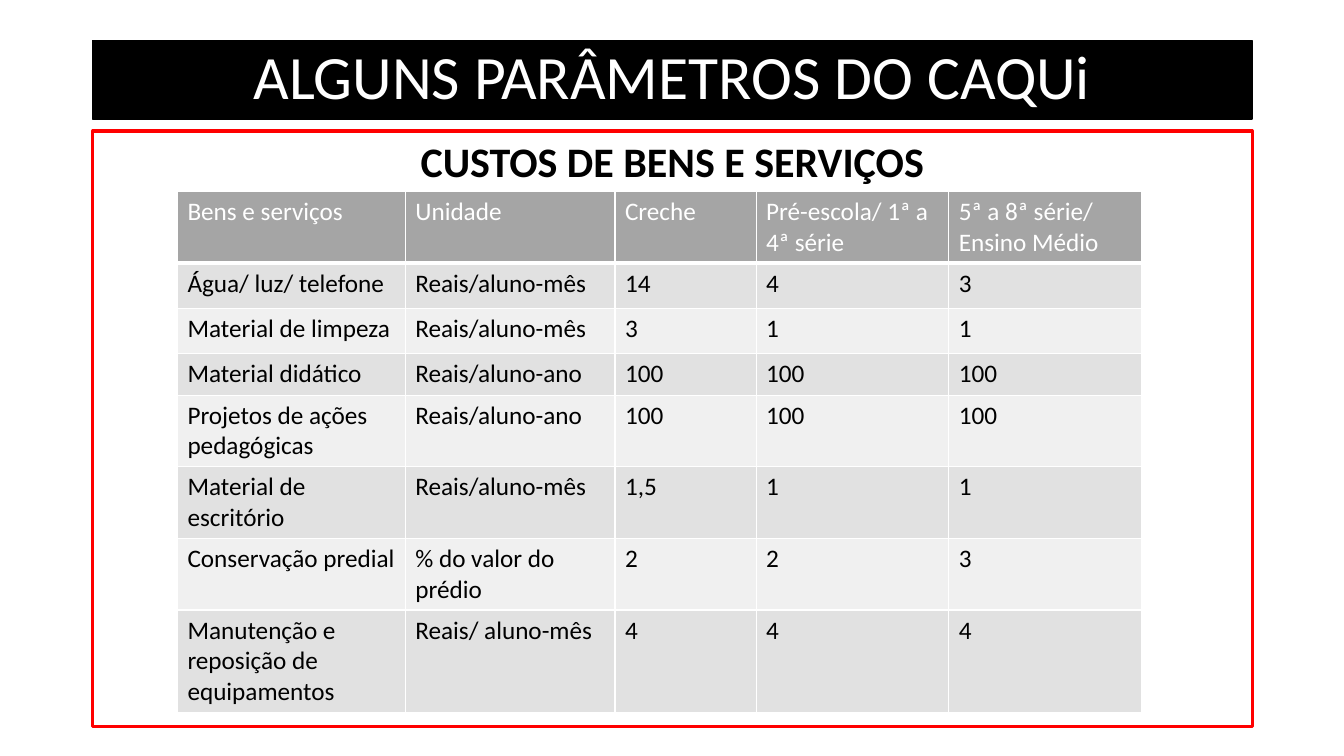
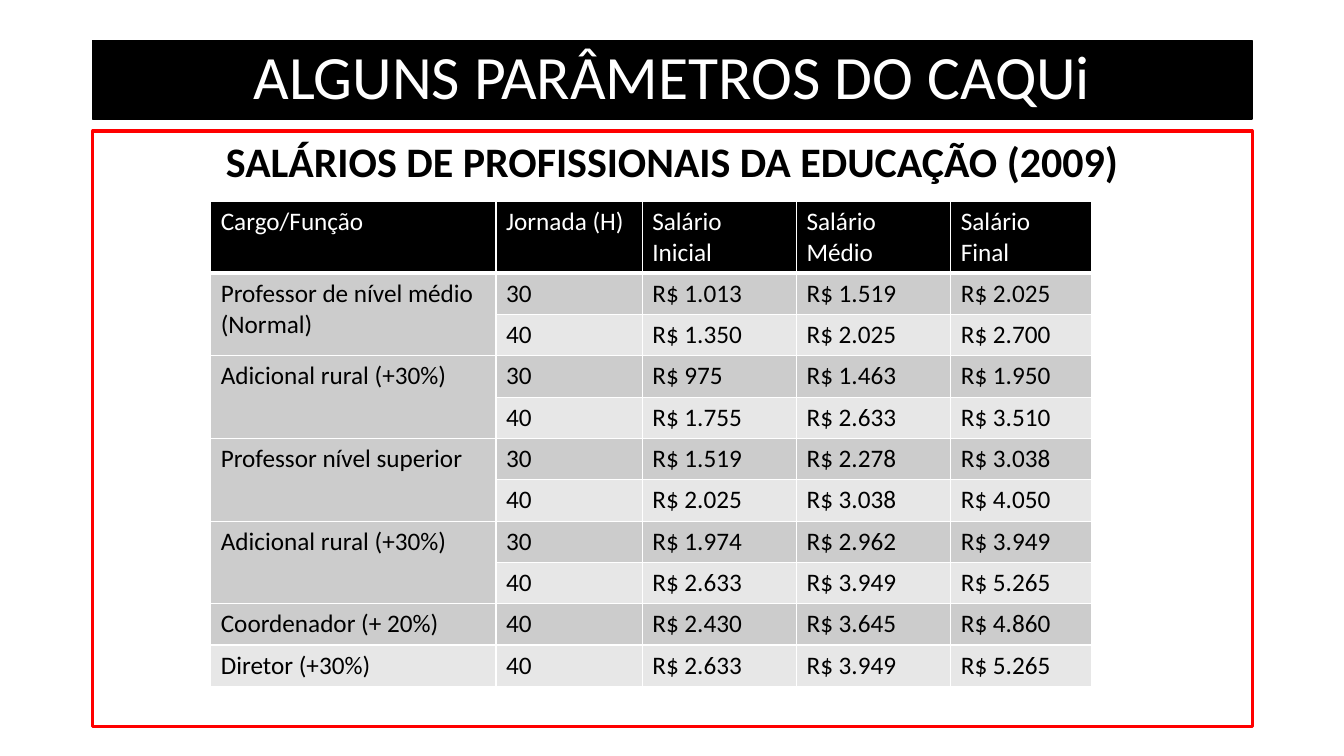
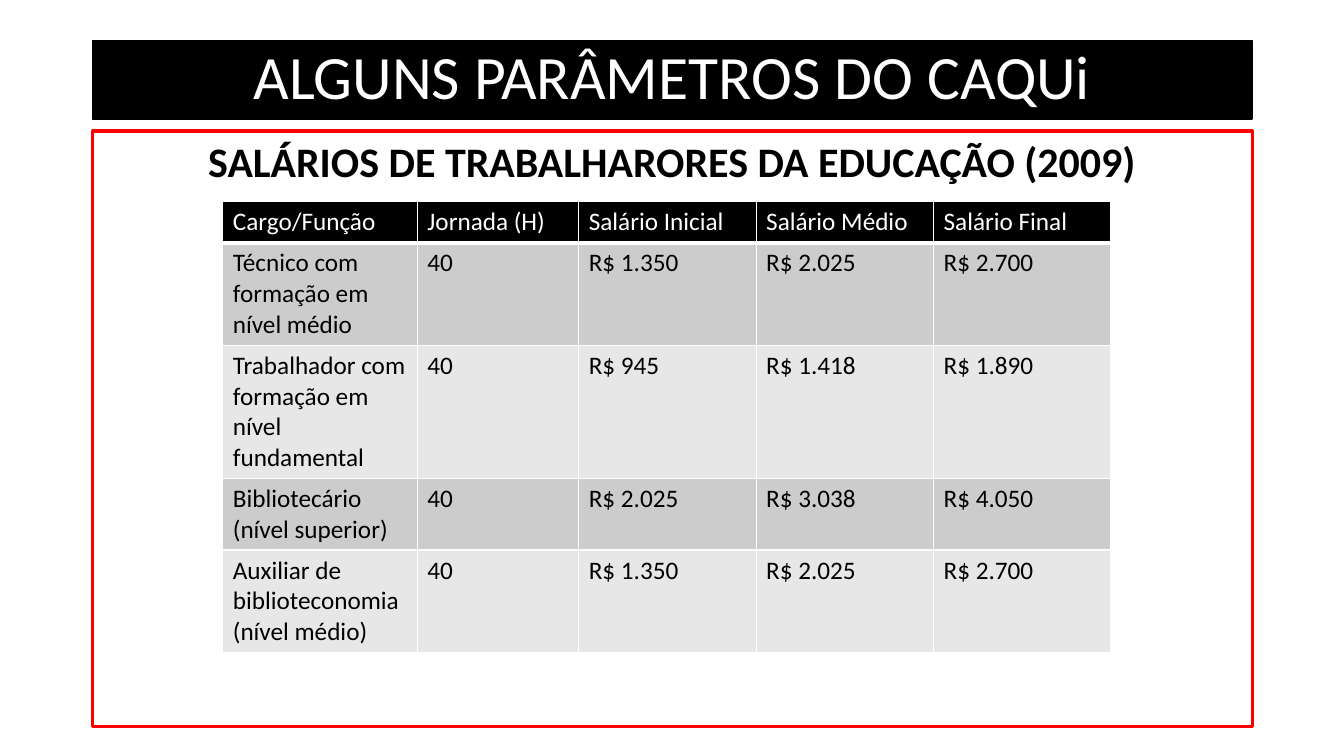
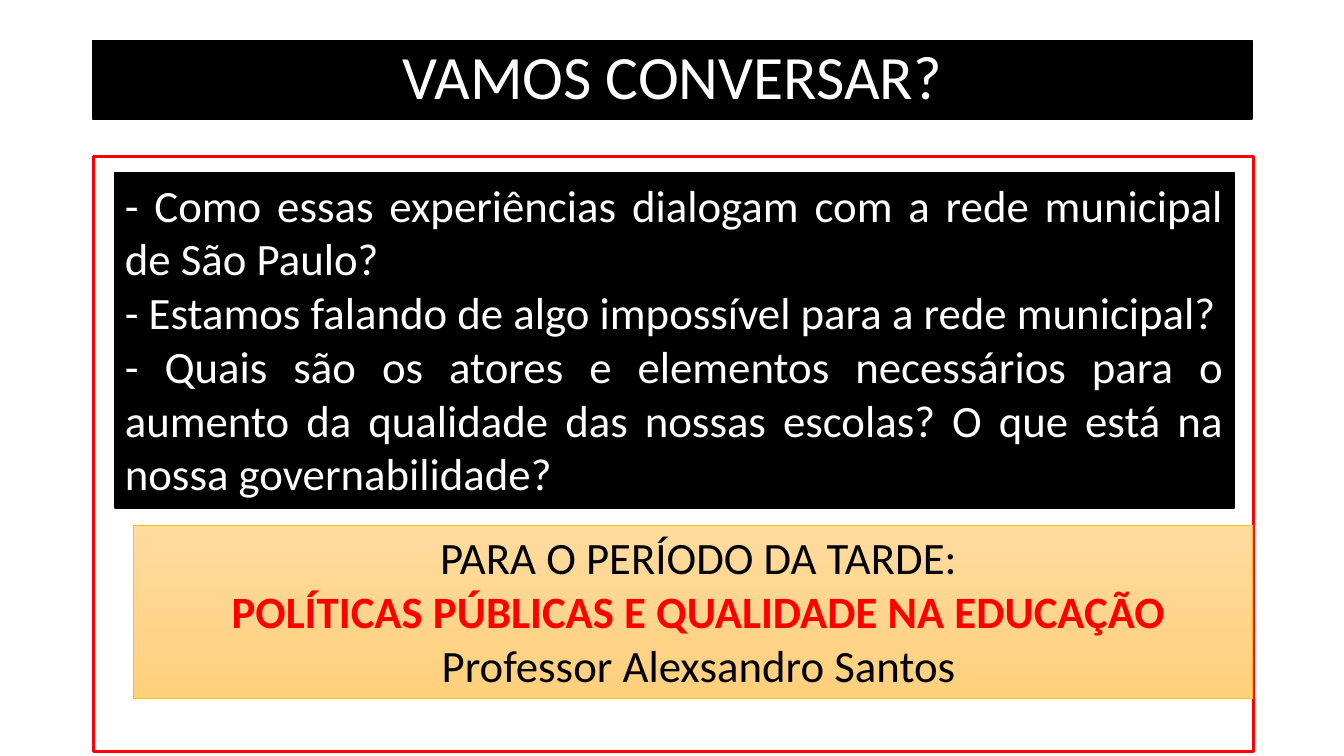
from lxml import etree
from pptx import Presentation
from pptx.dml.color import RGBColor
from pptx.enum.shapes import MSO_SHAPE
from pptx.enum.text import MSO_ANCHOR, PP_ALIGN
from pptx.oxml.ns import qn
from pptx.util import Inches, Pt

RECT = MSO_SHAPE.RECTANGLE
TOP, MIDDLE = MSO_ANCHOR.TOP, MSO_ANCHOR.MIDDLE
CENTER, JUSTIFY = PP_ALIGN.CENTER, PP_ALIGN.JUSTIFY

# Shared look
FONT = "Calibri"
BLACK, WHITE, RED, GOLD = "000000", "FFFFFF", "FF0000", "FFC000"
GLOW = ("FFDB9E", "FFD07C")
DARK = (BLACK, "CCCCCC", "E7E7E7")   # header, odd rows, even rows
GRAY = ("A5A5A5", "E1E1E1", "F0F0F0")
LEFT, WIDTH = 0.92, 11.5
FRAME_TOP, FRAME_HIGH = 1.3, 5.91
HEAD = "ALGUNS PARÂMETROS DO CAQUi"

# Table contents; an empty first cell joins the cell above
GOODS = [
    ("Bens e serviços", "Unidade", "Creche", "Pré-escola/ 1ª a 4ª série",
     "5ª a 8ª série/ Ensino Médio"),
    ("Água/ luz/ telefone", "Reais/aluno-mês", "14", "4", "3"),
    ("Material de limpeza", "Reais/aluno-mês", "3", "1", "1"),
    ("Material didático", "Reais/aluno-ano", "100", "100", "100"),
    ("Projetos de ações pedagógicas", "Reais/aluno-ano", "100", "100", "100"),
    ("Material de escritório", "Reais/aluno-mês", "1,5", "1", "1"),
    ("Conservação predial", "% do valor do prédio", "2", "2", "3"),
    ("Manutenção e reposição de equipamentos", "Reais/ aluno-mês", "4", "4", "4"),
]
PAY_HEAD = ("Cargo/Função", "Jornada (H)", "Salário Inicial", "Salário Médio",
            "Salário Final")
STAFF = [
    PAY_HEAD,
    ("Professor de nível médio (Normal)", "30", "R$ 1.013", "R$ 1.519", "R$ 2.025"),
    ("", "40", "R$ 1.350", "R$ 2.025", "R$ 2.700"),
    ("Adicional rural (+30%)", "30", "R$ 975", "R$ 1.463", "R$ 1.950"),
    ("", "40", "R$ 1.755", "R$ 2.633", "R$ 3.510"),
    ("Professor nível superior", "30", "R$ 1.519", "R$ 2.278", "R$ 3.038"),
    ("", "40", "R$ 2.025", "R$ 3.038", "R$ 4.050"),
    ("Adicional rural (+30%)", "30", "R$ 1.974", "R$ 2.962", "R$ 3.949"),
    ("", "40", "R$ 2.633", "R$ 3.949", "R$ 5.265"),
    ("Coordenador (+ 20%)", "40", "R$ 2.430", "R$ 3.645", "R$ 4.860"),
    ("Diretor (+30%)", "40", "R$ 2.633", "R$ 3.949", "R$ 5.265"),
]
WORKERS = [
    PAY_HEAD,
    ("Técnico com formação em nível médio", "40", "R$ 1.350", "R$ 2.025", "R$ 2.700"),
    ("Trabalhador com formação em nível fundamental", "40", "R$ 945", "R$ 1.418",
     "R$ 1.890"),
    ("Bibliotecário (nível superior)", "40", "R$ 2.025", "R$ 3.038", "R$ 4.050"),
    ("Auxiliar de biblioteconomia (nível médio)", "40", "R$ 1.350", "R$ 2.025",
     "R$ 2.700"),
]
TALK = [
    "- Como essas experiências dialogam com a rede municipal de São Paulo?",
    "- Estamos falando de algo impossível para a rede municipal?",
    "- Quais são os atores e elementos necessários para o aumento da qualidade "
    "das nossas escolas? O que está na nossa governabilidade?",
]
NEXT = ["PARA O PERÍODO DA TARDE:", "POLÍTICAS PÚBLICAS E QUALIDADE NA EDUCAÇÃO",
        "Professor Alexsandro Santos"]


def rgb(code):
    return RGBColor.from_string(code)


def style(para, size, color, bold=False):
    font = para.font
    font.name, font.size, font.bold = FONT, Pt(size), bold
    font.color.rgb = rgb(color)


def box(slide, place, fill, line, weight):
    shape = slide.shapes.add_shape(RECT, *map(Inches, place))
    shape.shadow.inherit = False
    shape.fill.solid()
    shape.fill.fore_color.rgb = rgb(fill)
    shape.line.color.rgb = rgb(line)
    shape.line.width = Pt(weight)
    return shape


def write(shape, lines, size, color, align=CENTER, anchor=TOP, bold=False):
    frame = shape.text_frame
    frame.word_wrap = True
    frame.vertical_anchor = anchor
    frame.text = "\n".join(lines)
    for para in frame.paragraphs:
        para.alignment = align
        style(para, size, color, bold)
    return frame.paragraphs


def title(slide, text):
    band = box(slide, (LEFT, 0.4, WIDTH, 0.78), BLACK, BLACK, 1)
    write(band, [text], 44, WHITE, anchor=MIDDLE)[0].line_spacing = 0.9


def panel(slide, left=LEFT, top=FRAME_TOP):
    return box(slide, (left, top, WIDTH, FRAME_HIGH), WHITE, RED, 2.25)


def border(cell, base):
    props = cell._tc.get_or_add_tcPr()
    for side, weight in zip("LRTB", (1, 1, 1, base)):
        line = etree.SubElement(props, qn(f"a:ln{side}"), w=str(Pt(weight)))
        fill = etree.SubElement(line, qn("a:solidFill"))
        etree.SubElement(fill, qn("a:srgbClr"), val=WHITE)


def grid(slide, left, top, cols, highs, rows, tones):
    table = slide.shapes.add_table(
        len(rows), len(cols), Inches(left), Inches(top),
        Inches(sum(cols)), Inches(sum(highs))).table
    table.first_row = table.horz_banding = False
    for col, wide in zip(table.columns, cols):
        col.width = Inches(wide)
    for row, high in zip(table.rows, highs):
        row.height = Inches(high)
    for r, texts in enumerate(rows):
        tone = tones[0] if r == 0 else tones[2 - r % 2]
        for c, text in enumerate(texts):
            cell = table.cell(r, c)
            border(cell, 1 if r else 3)
            cell.fill.solid()
            cell.fill.fore_color.rgb = rgb(tone)
            if text:
                cell.text = text
            style(cell.text_frame.paragraphs[0], 18, BLACK if r else WHITE)
        if not texts[0]:
            table.cell(r - 1, 0).merge(table.cell(r, 0))


def data(slide, name, *spec):
    title(slide, HEAD)
    write(panel(slide), [name], 30, BLACK, bold=True)
    grid(slide, *spec)


def closing(slide):
    panel(slide, 0.93, 1.55)
    title(slide, "VAMOS CONVERSAR?")
    # Afternoon notice
    note = box(slide, (1.32, 5.21, 11.1, 1.72), GLOW[0], GOLD, 0.5)
    note.fill.gradient()
    note.fill.gradient_angle = 270
    for stop, tone in zip(note.fill.gradient_stops, GLOW):
        stop.color.rgb = rgb(tone)
    note.text_frame.margin_left = Inches(0.22)
    style(write(note, NEXT, 32, BLACK)[1], 32, RED, True)
    # Questions
    talk = box(slide, (1.14, 1.71, 11.1, 3.33), BLACK, BLACK, 1)
    write(talk, TALK, 32, WHITE, JUSTIFY)


def main():
    deck = Presentation()
    deck.slide_width, deck.slide_height = Inches(13.33), Inches(7.5)
    blank = deck.slide_layouts[6]
    one, two, three, four = (deck.slides.add_slide(blank) for _ in range(4))
    data(one, "CUSTOS DE BENS E SERVIÇOS", 1.76, 1.9,
         [2.26, 2.08, 1.4, 1.91, 1.91],
         [0.71, 0.45, 0.45, 0.41, 0.71, 0.71, 0.71, 1.01], GOODS, GRAY)
    data(two, "SALÁRIOS DE PROFISSIONAIS DA EDUCAÇÃO (2009)", 2.09, 2,
         [2.83, 1.45, 1.53, 1.53, 1.4], [0.71] + [0.41] * 10, STAFF, DARK)
    data(three, "SALÁRIOS DE TRABALHARORES DA EDUCAÇÃO (2009)", 2.21, 2,
         [1.93, 1.6] + [1.76] * 3, [0.41, 1.01, 1.32, 0.71, 1.01], WORKERS, DARK)
    closing(four)
    deck.save("out.pptx")


if __name__ == "__main__":
    main()
